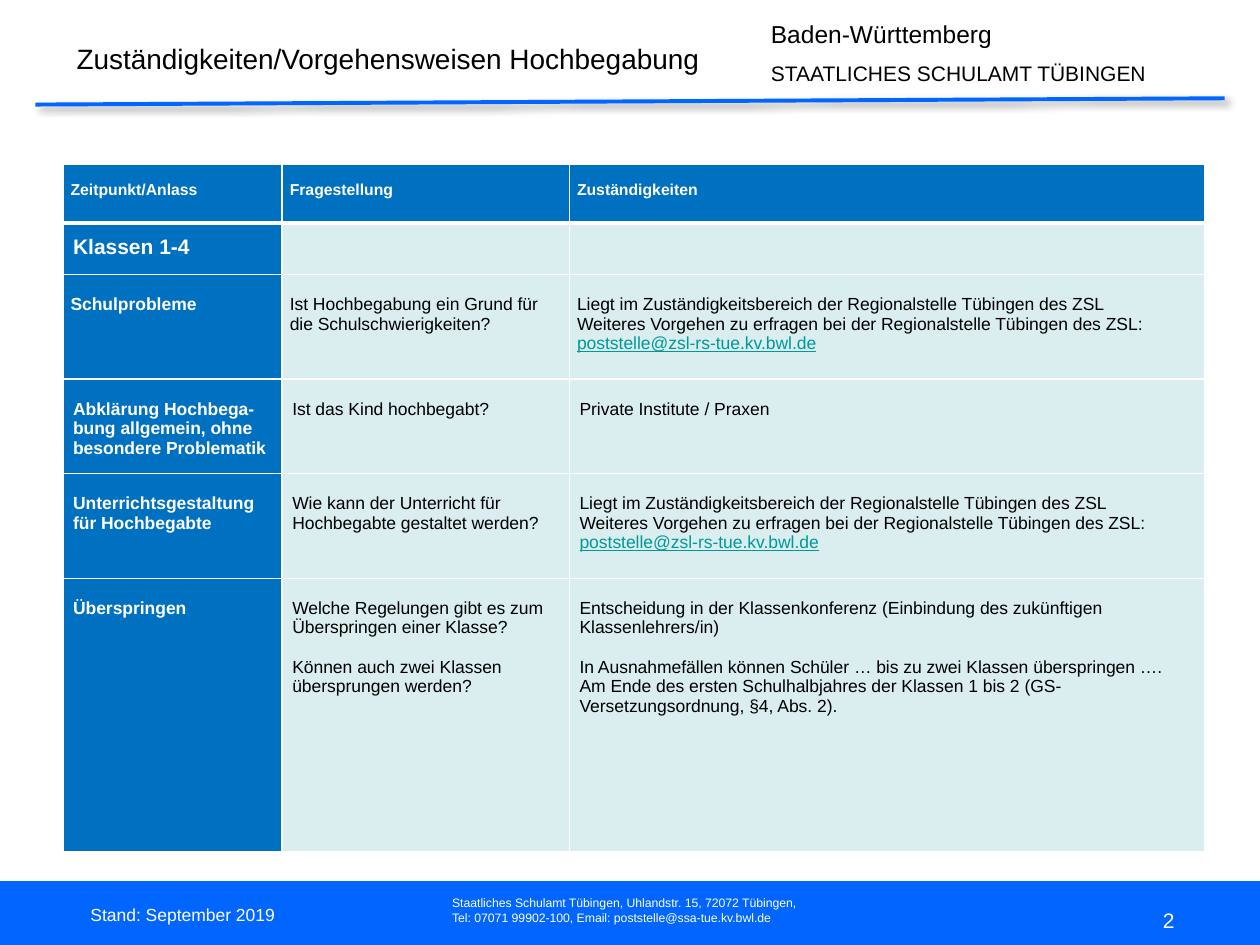
from lxml import etree
from pptx import Presentation
from pptx.dml.color import RGBColor
from pptx.enum.shapes import MSO_CONNECTOR as Connector, MSO_SHAPE as Shape
from pptx.enum.text import MSO_ANCHOR as Anchor, PP_ALIGN as Align
from pptx.oxml import parse_xml
from pptx.oxml.ns import nsdecls, qn
from pptx.util import Inches, Pt

BLACK = RGBColor(0x00, 0x00, 0x00)
WHITE = RGBColor(0xFF, 0xFF, 0xFF)
BLUE = RGBColor(0x00, 0x66, 0xFF)
HEAD_BLUE = RGBColor(0x00, 0x70, 0xC0)
PALE = RGBColor(0xDA, 0xED, 0xEF)
TEAL = RGBColor(0x00, 0x99, 0x99)

# Content: a cell is a list of paragraphs, GAP puts a line of space before the next
GAP = None
MAIL = "poststelle@zsl-rs-tue.kv.bwl.de"
REGIONAL = [
    "Liegt im Zuständigkeitsbereich der Regionalstelle Tübingen des ZSL",
    "Weiteres Vorgehen zu erfragen bei der Regionalstelle Tübingen des ZSL: " + MAIL,
]
COLUMNS = [1.74, 2.28, 5.04]
# Rows: height, side inset, top inset, text size, cells
ROWS = [
    (0.47, 0.06, 0.14, 9, [["Zeitpunkt/Anlass"], ["Fragestellung"], ["Zuständigkeiten"]]),
    (0.41, 0.08, 0.1, 12, [["Klassen 1-4"], [], []]),
    (0.83, 0.06, 0.16, 10, [
        ["Schulprobleme"],
        ["Ist Hochbegabung ein Grund für die Schulschwierigkeiten?"],
        REGIONAL]),
    (0.75, 0.08, 0.16, 10, [
        ["Abklärung Hochbega-bung allgemein, ohne besondere Problematik"],
        ["Ist das Kind hochbegabt?"],
        ["Private Institute / Praxen"]]),
    (0.83, 0.08, 0.16, 10, [
        ["Unterrichtsgestaltung für Hochbegabte"],
        ["Wie kann der Unterricht für Hochbegabte gestaltet werden?"],
        REGIONAL]),
    (2.17, 0.08, 0.16, 10, [
        ["Überspringen"],
        ["Welche Regelungen gibt es zum Überspringen einer Klasse?", GAP,
         "Können auch zwei Klassen übersprungen werden?"],
        ["Entscheidung in der Klassenkonferenz (Einbindung des zukünftigen Klassenlehrers/in)",
         GAP,
         "In Ausnahmefällen können Schüler … bis zu zwei Klassen überspringen ….",
         "Am Ende des ersten Schulhalbjahres der Klassen 1 bis 2 "
         "(GS-Versetzungsordnung, §4, Abs. 2)."]]),
]
# Text boxes: position, anchor, alignment, colour, (text, size) per paragraph
TEXTS = [
    ((3.49, 7.06, 2.97, 0.34), Anchor.TOP, Align.LEFT, WHITE, [
        ("Staatliches Schulamt Tübingen, Uhlandstr. 15, 72072 Tübingen,\n"
         "Tel: 07071 99902-100, Email: poststelle@ssa-tue.kv.bwl.de", 7)]),
    ((6.02, 0.1, 3.26, 0.64), Anchor.TOP, Align.LEFT, BLACK, [
        ("Baden-Württemberg", 14), ("STAATLICHES SCHULAMT TÜBINGEN", 12)]),
    ((0.51, 0.28, 5.43, 0.39), Anchor.TOP, Align.LEFT, BLACK, [
        ("Zuständigkeiten/Vorgehensweisen Hochbegabung", 16)]),
    ((0.62, 7.06, 2.33, 0.4), Anchor.MIDDLE, Align.LEFT, WHITE, [
        ("Stand: September 2019", 10)]),
    ((7.09, 7.1, 2.33, 0.4), Anchor.MIDDLE, Align.RIGHT, WHITE, [("2", 12)]),
]


def style(span, size, color, **formats):
    span.font.color.rgb = color
    for name, value in {"name": "Arial", "size": Pt(size), **formats}.items():
        setattr(span.font, name, value)


def add_text(page, place, anchor, align, color, lines):
    frame = page.shapes.add_textbox(*map(Inches, place)).text_frame
    frame.word_wrap = True
    frame.vertical_anchor = anchor
    for index, (text, size) in enumerate(lines):
        para = frame.add_paragraph() if index else frame.paragraphs[0]
        para.text = text
        para.alignment = align
        if index:
            para.space_before = Pt(7)
        for span in para.runs:
            style(span, size, color)


def fill_cell(cell, paragraphs, size, color, bold):
    gap, first = False, True
    for text in paragraphs:
        if text is GAP:
            gap = True
            continue
        para = cell.text_frame.paragraphs[0] if first else cell.text_frame.add_paragraph()
        if gap:
            para.space_before = Pt(size * 1.15)
        gap, first = False, False
        before, mail, _ = text.partition(MAIL)
        span = para.add_run()
        span.text = before
        style(span, size, color, bold=bold)
        if mail:
            span = para.add_run()
            span.text = mail
            style(span, size, TEAL, bold=False, underline=True)


def add_borders(cell, widths):
    props = cell._tc.get_or_add_tcPr()
    for index, (side, width) in enumerate(widths.items()):
        props.insert(index, parse_xml(
            f'<a:ln{side} {nsdecls("a")} w="{Pt(width)}"><a:solidFill>'
            f'<a:srgbClr val="{WHITE}"/></a:solidFill></a:ln{side}>'))


def add_schedule(page):
    table = page.shapes.add_table(
        len(ROWS), len(COLUMNS), Inches(0.5), Inches(1.3),
        Inches(sum(COLUMNS)), Inches(sum(row[0] for row in ROWS))).table
    for column, width in zip(table.columns, COLUMNS):
        column.width = Inches(width)
    for r, (height, side, top, size, cells) in enumerate(ROWS):
        table.rows[r].height = Inches(height)
        for c, paragraphs in enumerate(cells):
            cell = table.cell(r, c)
            heading = r == 0 or c == 0
            cell.margin_left = cell.margin_right = Inches(side)
            cell.margin_top, cell.margin_bottom = Inches(top), 0
            cell.fill.solid()
            cell.fill.fore_color.rgb = HEAD_BLUE if heading else PALE
            fill_cell(cell, paragraphs, size, WHITE if heading else BLACK, heading)
            add_borders(cell, {"L": 1, "R": 1, "T": 3 if r == 1 else 1,
                               "B": 3 if r == 0 else 1})


deck = Presentation()
deck.slide_width, deck.slide_height = Inches(10), Inches(7.5)
page = deck.slides.add_slide(deck.slide_layouts[6])

# Footer band
band = page.shapes.add_shape(Shape.RECTANGLE, *map(Inches, (0, 7.01, 10, 0.49)))
band.shadow.inherit = False
band.fill.solid()
band.fill.fore_color.rgb = band.line.color.rgb = BLUE
band.line.width = Pt(2)

# Header rule with its soft shadow
rule = page.shapes.add_connector(Connector.STRAIGHT, *map(Inches, (0.28, 0.83, 9.72, 0.78)))
rule.line.color.rgb = BLUE
rule.line.width = Pt(2.25)
effects = etree.SubElement(rule._element.spPr, qn("a:effectLst"))
effects.append(parse_xml(
    f'<a:outerShdw {nsdecls("a")} blurRad="{Pt(4)}" dist="{Pt(3)}" dir="2700000">'
    f'<a:srgbClr val="{BLACK}"><a:alpha val="40000"/></a:srgbClr></a:outerShdw>'))

add_schedule(page)
for text in TEXTS:
    add_text(page, *text)

deck.save("out.pptx")
